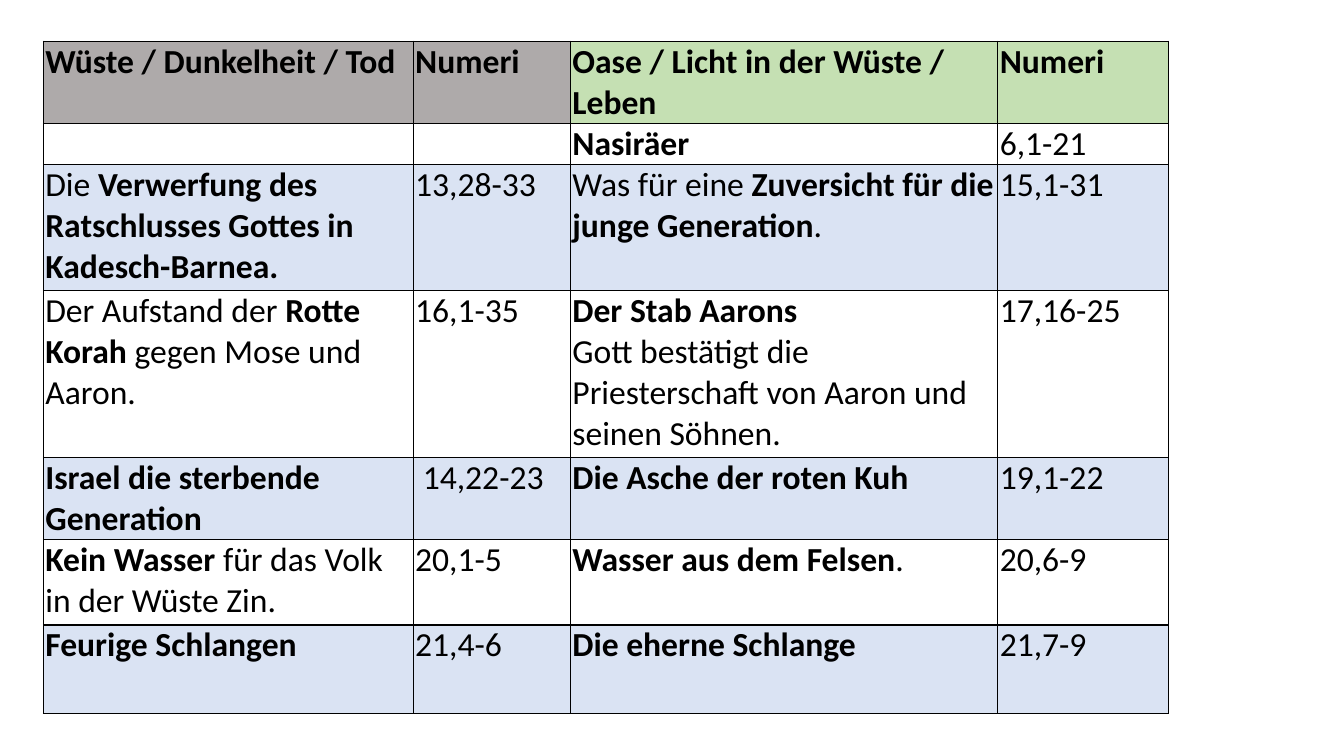
"""Build a slide contrasting desert and oasis passages in Numeri."""
from lxml import etree
from pptx import Presentation
from pptx.dml.color import RGBColor
from pptx.oxml.ns import qn
from pptx.util import Pt

COLORS = {"desert": "AEAAAA", "oasis": "C5E0B3", "band": "DAE3F3",
          "plain": "FFFFFF", "ink": "000000"}

# Text between asterisks is bold.
HEADER = ("*Wüste / Dunkelheit / Tod*", "*Numeri*",
          "*Oase / Licht in der Wüste / Leben*", "*Numeri*")
PASSAGES = [
    ("", "", "*Nasiräer*", "6,1-21"),
    ("Die *Verwerfung des Ratschlusses Gottes in Kadesch-Barnea.*", "13,28-33",
     "Was für eine *Zuversicht für die junge Generation*.", "15,1-31"),
    ("Der Aufstand der *Rotte Korah* gegen Mose und Aaron.", "16,1-35",
     "*Der Stab Aarons*\nGott bestätigt die Priesterschaft von Aaron und seinen Söhnen.",
     "17,16-25"),
    ("*Israel die sterbende Generation*", " 14,22-23",
     "*Die Asche der roten Kuh*", "19,1-22"),
    ("*Kein Wasser* für das Volk in der Wüste Zin.", "20,1-5",
     "*Wasser aus dem Felsen*.", "20,6-9"),
]
SERPENTS = ("*Feurige Schlangen*", "21,4-6", "*Die eherne Schlange*", "21,7-9")

LEFT, TOP, SERPENTS_TOP = 31, 29.5, 446.4
COLUMN_WIDTHS = (264.2, 112.3, 305.3, 121.7)
ROW_HEIGHTS = (57.6, 28.8, 90, 119.5, 57.6, 63.4)
SERPENTS_HEIGHT = 63.4
HEADER_FILLS = ("desert", "desert", "oasis", "oasis")
INSET = 1.4


def write(frame, text, *, size=24, font="Calibri", color="ink"):
    """Fill a text frame, turning asterisk spans bold."""
    frame.word_wrap = True
    for line_number, line in enumerate(text.split("\n")):
        paragraph = frame.paragraphs[0] if line_number == 0 else frame.add_paragraph()
        paragraph.font.size = Pt(size)
        for part_number, part in enumerate(line.split("*")):
            if part:
                run = paragraph.add_run()
                run.text = part
                run.font.size = Pt(size)
                run.font.name = font
                run.font.bold = part_number % 2 == 1
                run.font.color.rgb = RGBColor.from_string(COLORS[color])


def add_borders(cell, width=1):
    """Draw a solid line on all four sides of a cell."""
    properties = cell._tc.get_or_add_tcPr()
    for position, side in enumerate(("lnL", "lnR", "lnT", "lnB")):
        line = etree.Element(qn(f"a:{side}"), w=str(Pt(width)))
        fill = etree.SubElement(line, qn("a:solidFill"))
        etree.SubElement(fill, qn("a:srgbClr"), val=COLORS["ink"])
        properties.insert(position, line)


def add_passage_table(slide, rows, fills, heights, top):
    """Place a bordered table with one fill name per cell."""
    table = slide.shapes.add_table(
        len(rows), len(COLUMN_WIDTHS), Pt(LEFT), Pt(top),
        Pt(sum(COLUMN_WIDTHS)), Pt(sum(heights))).table
    table.first_row = False
    table.horz_banding = False
    for column, width in zip(table.columns, COLUMN_WIDTHS):
        column.width = Pt(width)
    for row, height, texts, row_fills in zip(table.rows, heights, rows, fills):
        row.height = Pt(height)
        for cell, text, fill in zip(row.cells, texts, row_fills):
            cell.margin_left = cell.margin_right = Pt(INSET)
            cell.margin_top = cell.margin_bottom = Pt(0)
            cell.fill.solid()
            cell.fill.fore_color.rgb = RGBColor.from_string(COLORS[fill])
            add_borders(cell)
            write(cell.text_frame, text)


def main():
    """Assemble and save the presentation."""
    deck = Presentation()
    deck.slide_width, deck.slide_height = Pt(960), Pt(540)
    slide = deck.slides.add_slide(deck.slide_layouts[6])
    columns = len(COLUMN_WIDTHS)
    bands = [("band" if number % 2 else "plain",) * columns
             for number in range(len(PASSAGES))]
    add_passage_table(slide, [HEADER, *PASSAGES], [HEADER_FILLS, *bands],
                      ROW_HEIGHTS, TOP)
    add_passage_table(slide, [SERPENTS], [("band",) * columns],
                      [SERPENTS_HEIGHT], SERPENTS_TOP)
    deck.save("out.pptx")


if __name__ == "__main__":
    main()
